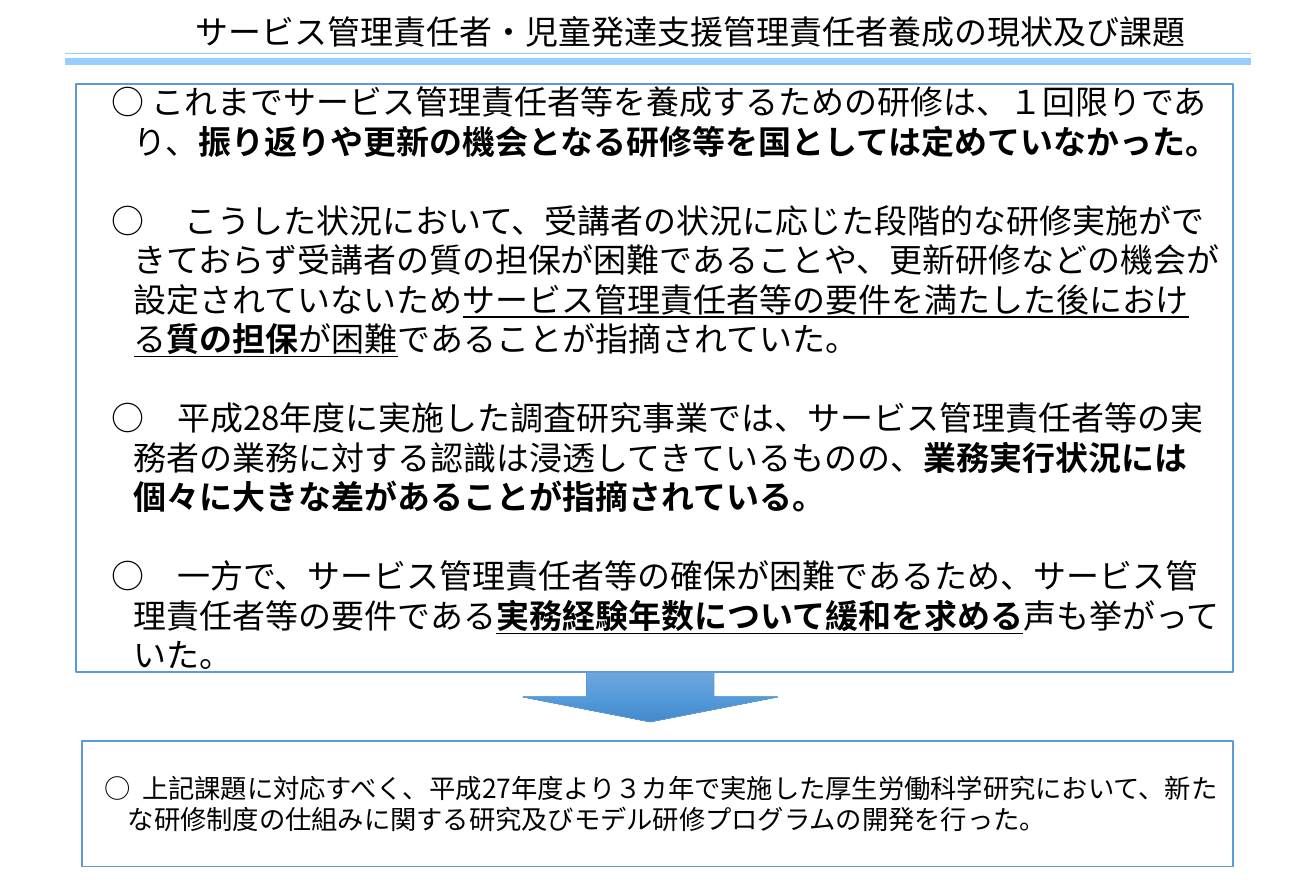
"""Build a slide on the state and issues of service manager training."""
from copy import deepcopy

from lxml import etree
from pptx import Presentation
from pptx.dml.color import RGBColor
from pptx.enum.shapes import MSO_CONNECTOR, MSO_SHAPE
from pptx.enum.text import MSO_ANCHOR, MSO_AUTO_SIZE, PP_ALIGN
from pptx.oxml.ns import qn
from pptx.util import Emu, Pt

RECTANGLE, DOWN_ARROW = MSO_SHAPE.RECTANGLE, MSO_SHAPE.DOWN_ARROW
STRAIGHT = MSO_CONNECTOR.STRAIGHT
MIDDLE, NO_FIT = MSO_ANCHOR.MIDDLE, MSO_AUTO_SIZE.NONE
LEFT, CENTER = PP_ALIGN.LEFT, PP_ALIGN.CENTER

BLACK = RGBColor(0x00, 0x00, 0x00)
WHITE = RGBColor(0xFF, 0xFF, 0xFF)
BORDER_BLUE = RGBColor(0x5B, 0x9B, 0xD5)
RULE_BLUE = RGBColor(0x99, 0xCC, 0xFF)
ARROW_STOPS = [
    (0, RGBColor(0x71, 0xA6, 0xDB)),
    (0.5, RGBColor(0x55, 0x9B, 0xDB)),
    (1, RGBColor(0x44, 0x8A, 0xCA)),
]

FONT = "Noto Sans CJK JP"
EMU_PER_PX = 9144
TITLE_ONLY = 5

BOLD = {"bold": True}
UNDERLINE = {"underline": True}

TITLE = "サービス管理責任者・児童発達支援管理責任者養成の現状及び課題"
ISSUES = [
    [
        ("○ これまでサービス管理責任者等を養成するための研修は、１回限りであり、", {}),
        ("振り返りや更新の機会となる研修等を国としては定めていなかった。", BOLD),
    ],
    [
        ("○ 　こうした状況において、受講者の状況に応じた段階的な研修実施ができておらず"
         "受講者の質の担保が困難であることや、更新研修などの機会が設定されていないため", {}),
        ("サービス管理責任者等の要件を満たした後における", UNDERLINE),
        ("質の担保", BOLD | UNDERLINE),
        ("が困難", UNDERLINE),
        ("であることが指摘されていた。", {}),
    ],
    [
        ("○　平成28年度に実施した調査研究事業では、サービス管理責任者等の"
         "実務者の業務に対する認識は浸透してきているものの、", {}),
        ("業務実行状況には個々に大きな差があることが指摘されている。", BOLD),
    ],
    [
        ("○　一方で、サービス管理責任者等の確保が困難であるため、"
         "サービス管理責任者等の要件である", {}),
        ("実務経験年数について緩和を求める", BOLD | UNDERLINE),
        ("声も挙がっていた。", {}),
    ],
]
RESPONSE = [
    [
        ("○  上記課題に対応すべく、平成27年度より３カ年で実施した厚生労働科学研究において、"
         "新たな研修制度の仕組みに関する研究及びモデル研修プログラムの開発を行った。", {}),
    ],
]


def px(length):
    return Emu(length * EMU_PER_PX)


def apply_format(target, values):
    for name, value in values.items():
        setattr(target, name, value)


class SlideBuilder:
    """Holds the text style and the current slide."""

    def __init__(self, presentation):
        layout = presentation.slide_layouts[TITLE_ONLY]
        self.slide = presentation.slides.add_slide(layout)

    def add_run(self, paragraph, text, size, values):
        run = paragraph.add_run()
        run.text = text
        apply_format(run.font, {"name": FONT, "size": Pt(size), **values})
        run.font.color.rgb = BLACK
        properties = run.font._element
        east_asian = etree.SubElement(properties, qn("a:ea"))
        east_asian.set("typeface", FONT)

    def title(self, text, left, top, width, height, size, shift):
        title = self.slide.shapes.title
        apply_format(title, {"left": px(left), "top": px(top),
                             "width": px(width), "height": px(height)})
        frame = title.text_frame
        apply_format(frame, {"auto_size": NO_FIT, "vertical_anchor": MIDDLE,
                             "margin_left": px(10 + shift), "word_wrap": True})
        paragraph = frame.paragraphs[0]
        paragraph.alignment = CENTER
        self.add_run(paragraph, text, size, {})

    def shape(self, kind, left, top, width, height, line_width):
        shape = self.slide.shapes.add_shape(
            kind, px(left), px(top), px(width), px(height))
        shape.shadow.inherit = False
        shape.line.color.rgb = BORDER_BLUE
        shape.line.width = Pt(line_width)
        return shape

    def text_box(self, paragraphs, left, top, width, height, size, margin, hanging):
        box = self.shape(RECTANGLE, left, top, width, height, 1)
        box.fill.solid()
        box.fill.fore_color.rgb = WHITE
        frame = box.text_frame
        apply_format(frame, {"word_wrap": True, "vertical_anchor": MIDDLE})
        line_height = Pt(size * 1.2)
        for index, runs in enumerate(paragraphs):
            paragraph = frame.add_paragraph() if index else frame.paragraphs[0]
            apply_format(paragraph, {
                "alignment": LEFT,
                "line_spacing": line_height,
                "space_before": line_height if index else Pt(0),
            })
            properties = paragraph._p.get_or_add_pPr()
            properties.set("marL", str(px(margin)))
            properties.set("indent", str(px(-hanging)))
            for text, values in runs:
                self.add_run(paragraph, text, size, values)

    def gradient_arrow(self, left, top, width, height):
        arrow = self.shape(DOWN_ARROW, left, top, width, height, 0.5)
        arrow.fill.gradient()
        arrow.fill.gradient_angle = 270
        stop_list = arrow._element.spPr.find(".//" + qn("a:gsLst"))
        stop_list.insert(1, deepcopy(stop_list[0]))
        for stop, (position, color) in zip(arrow.fill.gradient_stops, ARROW_STOPS):
            stop.position = position
            stop.color.rgb = color

    def rule(self, left, right, y, line_width):
        connector = self.slide.shapes.add_connector(
            STRAIGHT, px(left), px(y), px(right), px(y))
        connector.line.color.rgb = RULE_BLUE
        connector.line.width = Pt(line_width)
        etree.SubElement(connector._element.spPr, qn("a:effectLst"))


def main():
    presentation = Presentation()
    presentation.slide_width = px(1110)
    presentation.slide_height = px(750)
    builder = SlideBuilder(presentation)
    builder.title(TITLE, 56, 0, 997, 52, size=20, shift=56)
    builder.text_box(ISSUES, 64, 71, 976, 496, size=20, margin=39, hanging=19)
    builder.text_box(RESPONSE, 69, 625, 971, 106, size=16, margin=29, hanging=20)
    builder.gradient_arrow(441, 567, 215, 42)
    for y, line_width in ((45, 0.5), (52, 4.5)):
        builder.rule(55, 1055, y, line_width)
    presentation.save("out.pptx")


if __name__ == "__main__":
    main()
